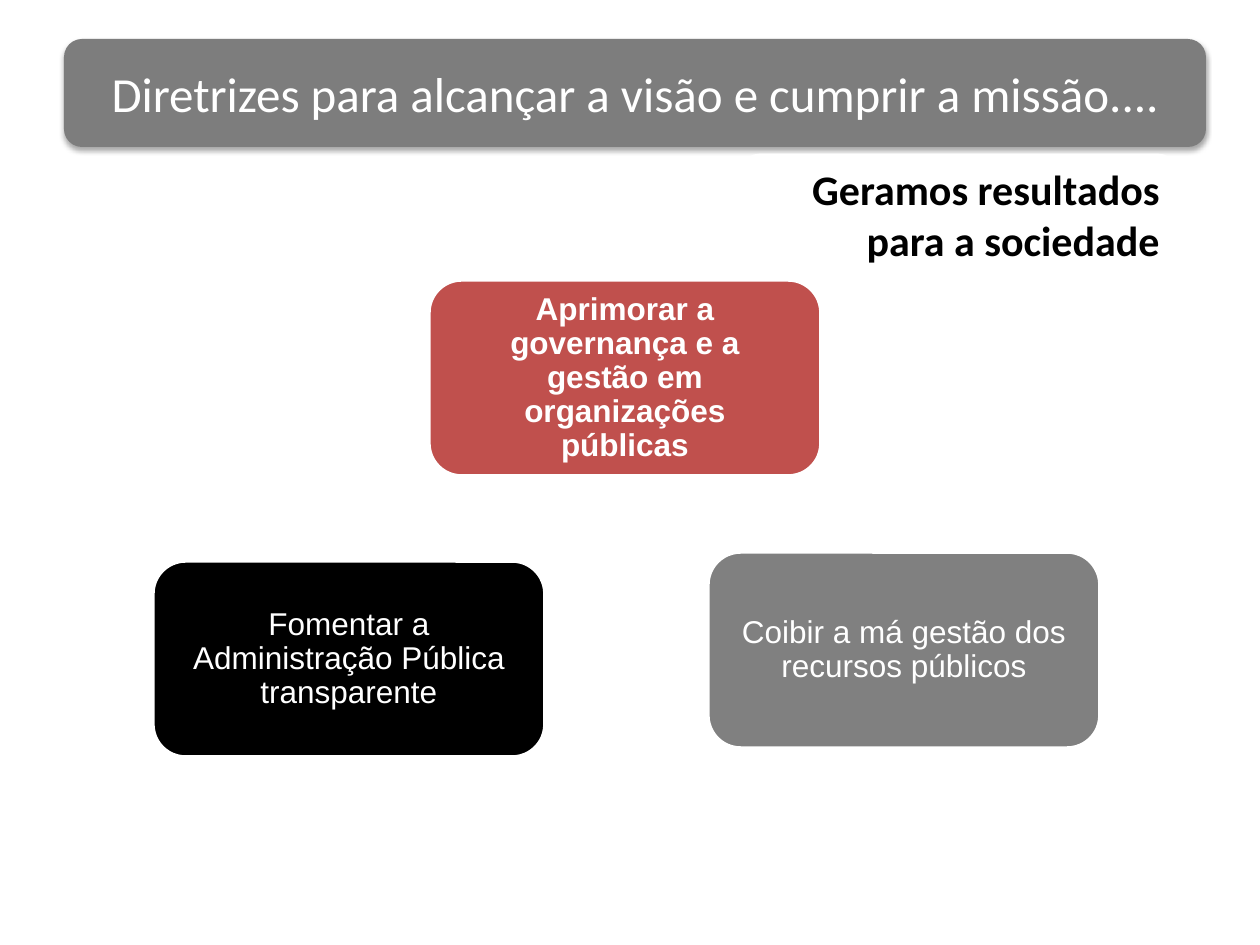
from lxml.etree import SubElement
from pptx import Presentation
from pptx.dml.color import RGBColor
from pptx.enum.shapes import MSO_SHAPE
from pptx.enum.text import MSO_ANCHOR, PP_ALIGN
from pptx.oxml.ns import qn
from pptx.util import Emu, Pt

WIDTH, HEIGHT = 1260, 945
WHITE = "FFFFFF"
TITLE = "Diretrizes para alcançar a visão e cumprir a missão...."
RESULT = "Geramos resultados para a sociedade"
CARD_W, CARD_H, CARD_INSET = 392, 196, 18
# left, top, fill, bold, text
CARDS = [
    (429, 280, "C0504D", True,
     "Aprimorar a governança e a gestão em organizações públicas"),
    (708, 552, "808080", False, "Coibir a má gestão dos recursos públicos"),
    (153, 561, "000000", False,
     "Fomentar a Administração Pública transparente"),
]


def px(n):
    return Emu(round(n * 914400 / 126))


def rgb(color):
    return RGBColor.from_string(color)


def add_box(slide, box, fill, text, font, size, color=WHITE, bold=False,
            align=PP_ALIGN.CENTER, line_width=None):
    """Add a rounded box with one paragraph; line_width gives a white outline."""
    sp = slide.shapes.add_shape(MSO_SHAPE.ROUNDED_RECTANGLE, *map(px, box))
    sp.shadow.inherit = False
    sp.fill.solid()
    sp.fill.fore_color.rgb = rgb(fill)
    if line_width:
        sp.line.color.rgb = rgb(WHITE)
        sp.line.width = Pt(line_width)
    else:
        sp.line.fill.background()
    tf = sp.text_frame
    tf.word_wrap = True
    tf.vertical_anchor = MSO_ANCHOR.MIDDLE
    tf.text = text
    p = tf.paragraphs[0]
    p.alignment = align
    f = p.runs[0].font
    f.name, f.size, f.bold = font, Pt(size), bold
    f.color.rgb = rgb(color)
    return sp


def add_shadow(sp, color, opacity, blur, distance):
    """Cast a shadow straight down; opacity in percent, lengths in points."""
    effects = sp._element.spPr.find(qn("a:effectLst"))
    shadow = SubElement(effects, qn("a:outerShdw"), blurRad=str(Pt(blur)),
                        dist=str(Pt(distance)), dir="5400000", rotWithShape="0")
    clr = SubElement(shadow, qn("a:srgbClr"), val=color)
    SubElement(clr, qn("a:alpha"), val=str(opacity * 1000))


def main():
    prs = Presentation()
    prs.slide_width, prs.slide_height = px(WIDTH), px(HEIGHT)
    slide = prs.slides.add_slide(prs.slide_layouts[6])

    title = add_box(slide, (64, 39, 1142, 108), "7D7D7D", TITLE, "Calibri", 28)
    add_shadow(title, "000000", 35, 3.1, 1.8)

    for left, top, fill, bold, text in CARDS:
        card = add_box(slide, (left, top, CARD_W, CARD_H), fill, text,
                       "Arial", 18, bold=bold, line_width=2)
        tf = card.text_frame
        tf.margin_left = tf.margin_right = px(CARD_INSET)
        tf.margin_top = tf.margin_bottom = px(CARD_INSET)
        tf.paragraphs[0].line_spacing = 0.9

    add_box(slide, (740, 155, 438, 118), WHITE, RESULT, "Calibri", 24,
            color="000000", bold=True, align=PP_ALIGN.RIGHT, line_width=1.5)
    prs.save("out.pptx")


if __name__ == "__main__":
    main()
